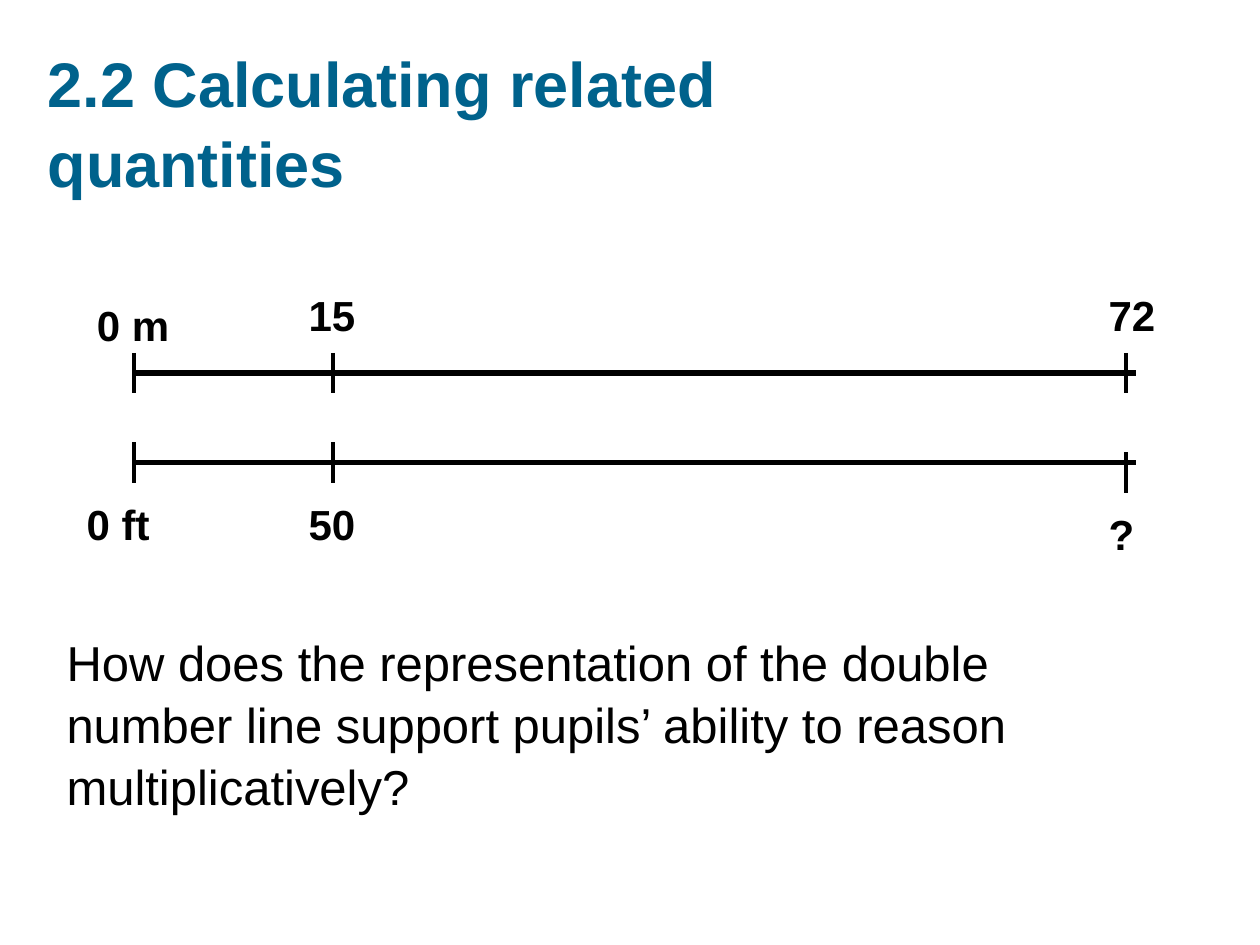
from pptx import Presentation
from pptx.dml.color import RGBColor
from pptx.enum.shapes import MSO_CONNECTOR
from pptx.enum.text import MSO_ANCHOR
from pptx.oxml.ns import qn
from pptx.util import Inches, Pt

STRAIGHT = MSO_CONNECTOR.STRAIGHT
TOP, MIDDLE = MSO_ANCHOR.TOP, MSO_ANCHOR.MIDDLE

TITLE = ["2.2 Calculating related", "quantities"]
QUESTION = ["How does the representation of the double number line support "
            "pupils’ ability to reason multiplicatively?"]

LINE_START, LINE_END = 1.06, 9.02
NUMBER_LINES = [2.96, 3.67]
TICK_LENGTH = 0.32
TICKS = [
    (1.06, 2.96), (2.64, 2.96), (8.94, 2.96),
    (1.06, 3.67), (2.64, 3.67), (8.94, 3.75),
]
LABEL_WIDTH, LABEL_HEIGHT = 0.87, 0.5
LABELS = [
    ("0 m", 0.67, 2.33, LABEL_WIDTH, 0.1),
    ("15", 2.17, 2.25, LABEL_WIDTH, 0.28),
    ("72", 8.7, 2.25, LABEL_WIDTH, 0.1),
    ("0 ft", 0.59, 3.91, LABEL_WIDTH, 0.1),
    ("50", 2.17, 3.91, LABEL_WIDTH, 0.28),
    ("?", 8.7, 3.99, 0.47, 0.1),
]

THEME = {
    "font": "Arial",
    "title": {"size": 36, "color": "00628C", "bold": True, "spacing": 1.05},
    "body": {"size": 28, "color": "000000", "bold": False, "spacing": 1.05},
    "label": {"size": 24, "color": "000000", "bold": True, "spacing": 1},
    "line": "000000",
    "axis_width": 3,
    "tick_width": 2.25,
}


def add_text(slide, lines, box, style, anchor=TOP, left_margin=0.1, top_margin=0.05):
    shape = slide.shapes.add_textbox(*map(Inches, box))
    frame = shape.text_frame
    frame.word_wrap = True
    frame.vertical_anchor = anchor
    frame.margin_left = Inches(left_margin)
    frame.margin_top = Inches(top_margin)
    paragraph = frame.paragraphs[0]
    paragraph.line_spacing = style["spacing"]
    for index, line in enumerate(lines):
        if index:
            paragraph.add_line_break()
        run = paragraph.add_run()
        run.text = line
        run.font.name = THEME["font"]
        run.font.size = Pt(style["size"])
        run.font.bold = style["bold"]
        run.font.color.rgb = RGBColor.from_string(style["color"])


def add_line(slide, start, end, width):
    connector = slide.shapes.add_connector(STRAIGHT, *map(Inches, start + end))
    connector.line.color.rgb = RGBColor.from_string(THEME["line"])
    connector.line.width = Pt(width)
    properties = connector._element.spPr
    properties.append(properties.makeelement(qn("a:effectLst"), {}))


def main():
    """Build the double number line slide and save it."""
    presentation = Presentation()
    presentation.slide_width, presentation.slide_height = Inches(10), Inches(7.5)
    slide = presentation.slides.add_slide(presentation.slide_layouts[6])

    add_text(slide, TITLE, (0.28, 0.33, 8.67, 1.25), THEME["title"], anchor=MIDDLE)
    add_text(slide, QUESTION, (0.43, 4.38, 8.66, 1.65), THEME["body"], top_margin=0.62)
    for y in NUMBER_LINES:
        add_line(slide, (LINE_START, y), (LINE_END, y), THEME["axis_width"])
    for x, y in TICKS:
        half = TICK_LENGTH / 2
        add_line(slide, (x, y - half), (x, y + half), THEME["tick_width"])
    for text, left, top, width, margin in LABELS:
        add_text(slide, [text], (left, top, width, LABEL_HEIGHT), THEME["label"],
                 left_margin=margin)

    presentation.save("out.pptx")


if __name__ == "__main__":
    main()
